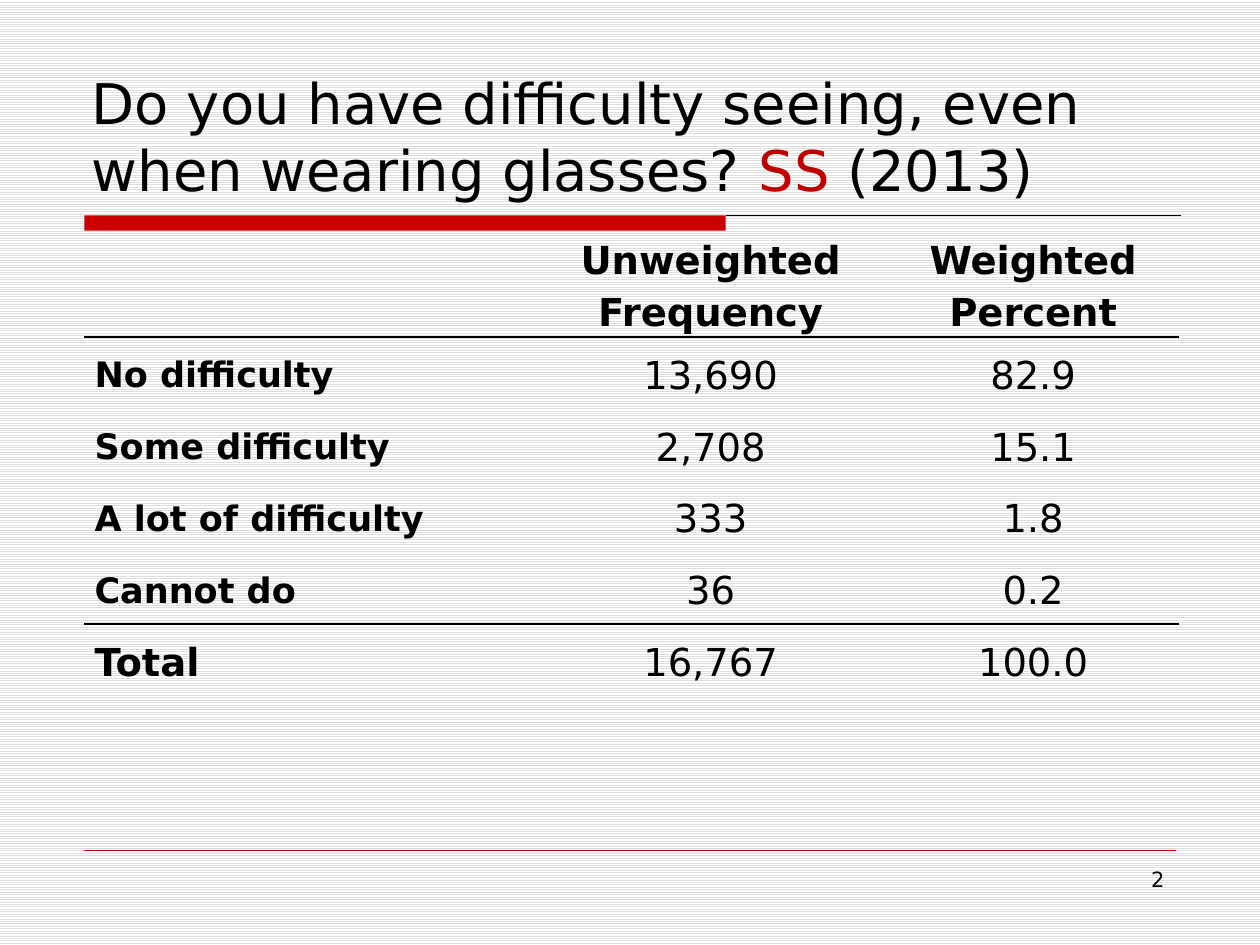
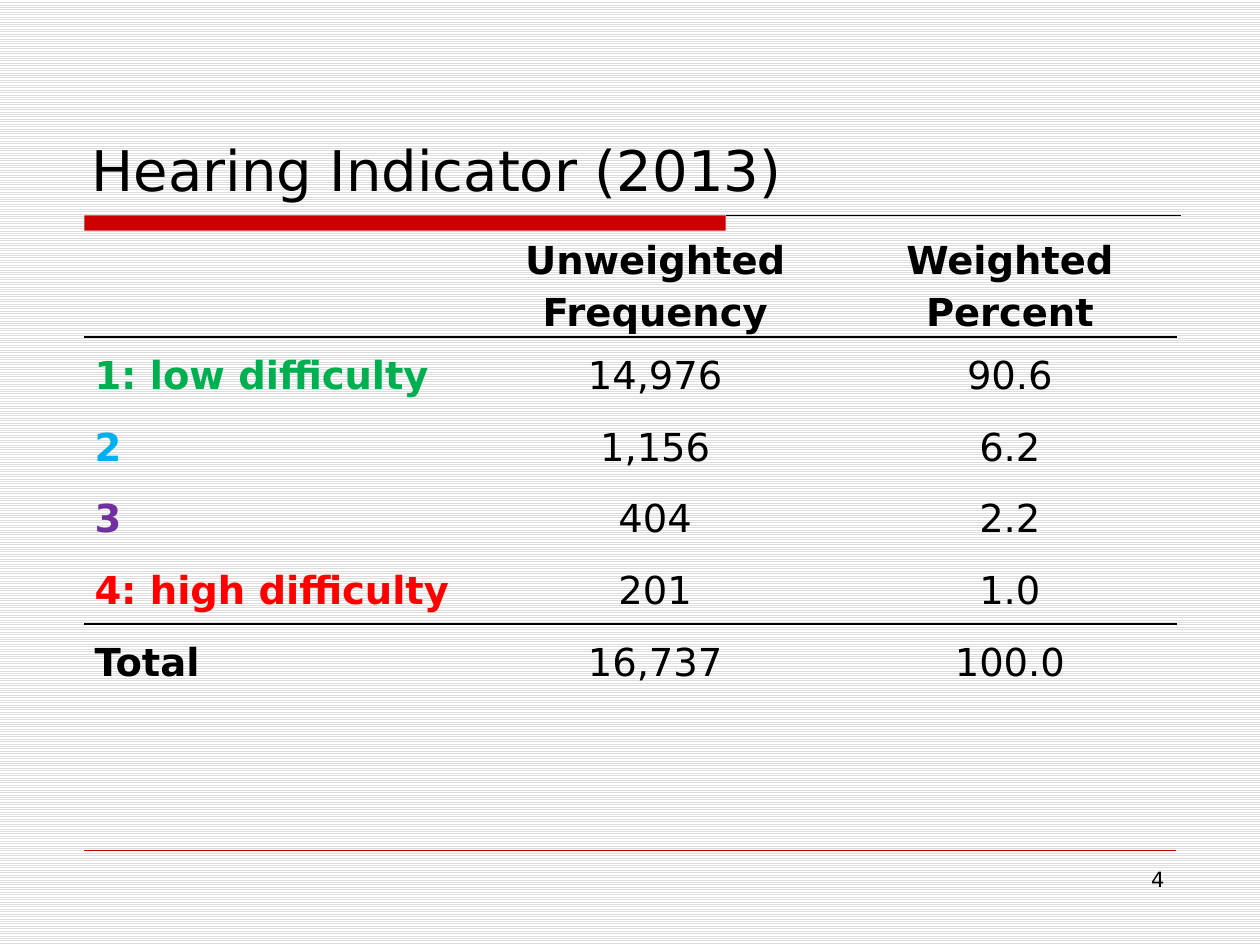
from lxml.etree import SubElement
from pptx import Presentation
from pptx.dml.color import RGBColor
from pptx.enum.dml import MSO_PATTERN
from pptx.enum.shapes import MSO_CONNECTOR, MSO_SHAPE
from pptx.enum.text import MSO_ANCHOR as Anchor, PP_ALIGN as Align
from pptx.oxml import parse_xml
from pptx.oxml.ns import nsdecls, qn
from pptx.util import Inches, Pt

FONT = "DejaVu Sans"
BLACK, RED = "000000", "CC0000"
LEFT, BAND_TOP, BAND_HEIGHT = 0.67, 1.71, 0.12
TABLE_TOP, HEADER_HEIGHT, ROW_HEIGHT = 1.83, 0.84, 0.57
HEADER = ["", "Unweighted\nFrequency", "Weighted Percent"]

SLIDES = [
    {
        "title": [("Do you have difficulty seeing, even when wearing glasses? ", BLACK),
                  ("SS", "C00000"), (" (2013)", BLACK)],
        "number": "2",
        "columns": [3.57, 2.8, 2.32],
        "label_size": 20,
        "label_colors": [BLACK] * 4,
        "rows": [
            ("No difficulty", "13,690", "82.9"),
            ("Some difficulty", "2,708", "15.1"),
            ("A lot of difficulty", "333", "1.8"),
            ("Cannot do", "36", "0.2"),
            ("Total", "16,767", "100.0"),
        ],
    },
    {
        "title": [("Hearing Indicator (2013)", BLACK)],
        "number": "4",
        "columns": [3.04, 2.98, 2.65],
        "label_size": 22,
        "label_colors": ["00B050", "00B0F0", "7030A0", "FF0000"],
        "rows": [
            ("1: low difficulty", "14,976", "90.6"),
            ("2", "1,156", "6.2"),
            ("3", "404", "2.2"),
            ("4: high difficulty", "201", "1.0"),
            ("Total", "16,737", "100.0"),
        ],
    },
]


def color(value):
    return RGBColor.from_string(value)


def style_font(font, size, value=BLACK, bold=False):
    font.name = FONT
    font.size = Pt(size)
    font.bold = bold
    font.color.rgb = color(value)


def add_line(slide, start, end, top, value, width):
    line = slide.shapes.add_connector(
        MSO_CONNECTOR.STRAIGHT, Inches(start), Inches(top), Inches(end), Inches(top))
    line.line.color.rgb = color(value)
    line.line.width = Pt(width)
    SubElement(line._element.spPr, qn("a:effectLst"))


def add_text(slide, box, runs, size, align=Align.LEFT, anchor=Anchor.TOP):
    frame = slide.shapes.add_textbox(*map(Inches, box)).text_frame
    frame.word_wrap = True
    frame.vertical_anchor = anchor
    paragraph = frame.paragraphs[0]
    paragraph.alignment = align
    for text, value in runs:
        run = paragraph.add_run()
        run.text = text
        style_font(run.font, size, value)


def add_frame(slide, title, number):
    fill = slide.background.fill
    fill.patterned()
    fill.pattern = MSO_PATTERN.LIGHT_HORIZONTAL
    fill.fore_color.rgb = color("DDDDDD")
    fill.back_color.rgb = color("FFFFFF")

    band = slide.shapes.add_shape(
        MSO_SHAPE.RECTANGLE, Inches(LEFT), Inches(BAND_TOP), Inches(5.09), Inches(BAND_HEIGHT))
    band.shadow.inherit = False
    band.fill.solid()
    band.fill.fore_color.rgb = color(RED)
    band.line.fill.background()
    add_line(slide, LEFT + 5.09, 9.37, BAND_TOP, BLACK, 0.75)
    add_line(slide, LEFT, 9.33, 6.75, RED, 0.25)

    add_text(slide, (0.63, 0.33, 8.75, 1.33), title, 32, anchor=Anchor.BOTTOM)
    add_text(slide, (7.17, 6.83, 2.17, 0.52), [(number, BLACK)], 12, align=Align.RIGHT)


def set_borders(cell, ruled_sides):
    properties = cell._tc.get_or_add_tcPr()
    for position, side in enumerate("LRTB"):
        if side in ruled_sides:
            paint = f'<a:solidFill><a:srgbClr val="{BLACK}"/></a:solidFill>'
        else:
            paint = "<a:noFill/>"
        border = parse_xml(f'<a:ln{side} {nsdecls("a")} w="{Pt(1)}">{paint}</a:ln{side}>')
        properties.insert(position, border)


def fill_cell(cell, text, align, size, value, bold, ruled_sides):
    cell.margin_left = cell.margin_right = Inches(0.08)
    cell.margin_top = cell.margin_bottom = 0
    cell.vertical_anchor = Anchor.MIDDLE
    cell.fill.background()
    set_borders(cell, ruled_sides)
    cell.text_frame.text = text
    for paragraph in cell.text_frame.paragraphs:
        paragraph.alignment = align
        paragraph.line_spacing = 1.15
        style_font(paragraph.font, size, value, bold)


def add_results(slide, columns, rows, label_size, label_colors):
    grid = [HEADER] + rows
    heights = [HEADER_HEIGHT] + [ROW_HEIGHT] * len(rows)
    table = slide.shapes.add_table(
        len(grid), len(columns), Inches(LEFT), Inches(TABLE_TOP),
        Inches(sum(columns)), Inches(sum(heights))).table
    table.first_row = table.horz_banding = False
    for column, width in zip(table.columns, columns):
        column.width = Inches(width)
    for row, height in zip(table.rows, heights):
        row.height = Inches(height)

    total = len(rows)
    sides = {0: "B", 1: "T", total - 1: "B", total: "T"}
    sizes = [22] + [label_size] * len(label_colors) + [22]
    colors = [BLACK] + label_colors + [BLACK]
    for row_index, texts in enumerate(grid):
        for column_index, text in enumerate(texts):
            is_label = column_index == 0
            fill_cell(
                table.cell(row_index, column_index), text,
                Align.LEFT if is_label else Align.CENTER,
                sizes[row_index] if is_label else 22,
                colors[row_index] if is_label else BLACK,
                is_label or row_index == 0,
                sides.get(row_index, ""))


def main():
    presentation = Presentation()
    presentation.slide_width = Inches(10)
    presentation.slide_height = Inches(7.5)
    for content in SLIDES:
        slide = presentation.slides.add_slide(presentation.slide_layouts[6])
        add_frame(slide, content["title"], content["number"])
        add_results(slide, content["columns"], content["rows"],
                    content["label_size"], content["label_colors"])
    presentation.save("out.pptx")


if __name__ == "__main__":
    main()
